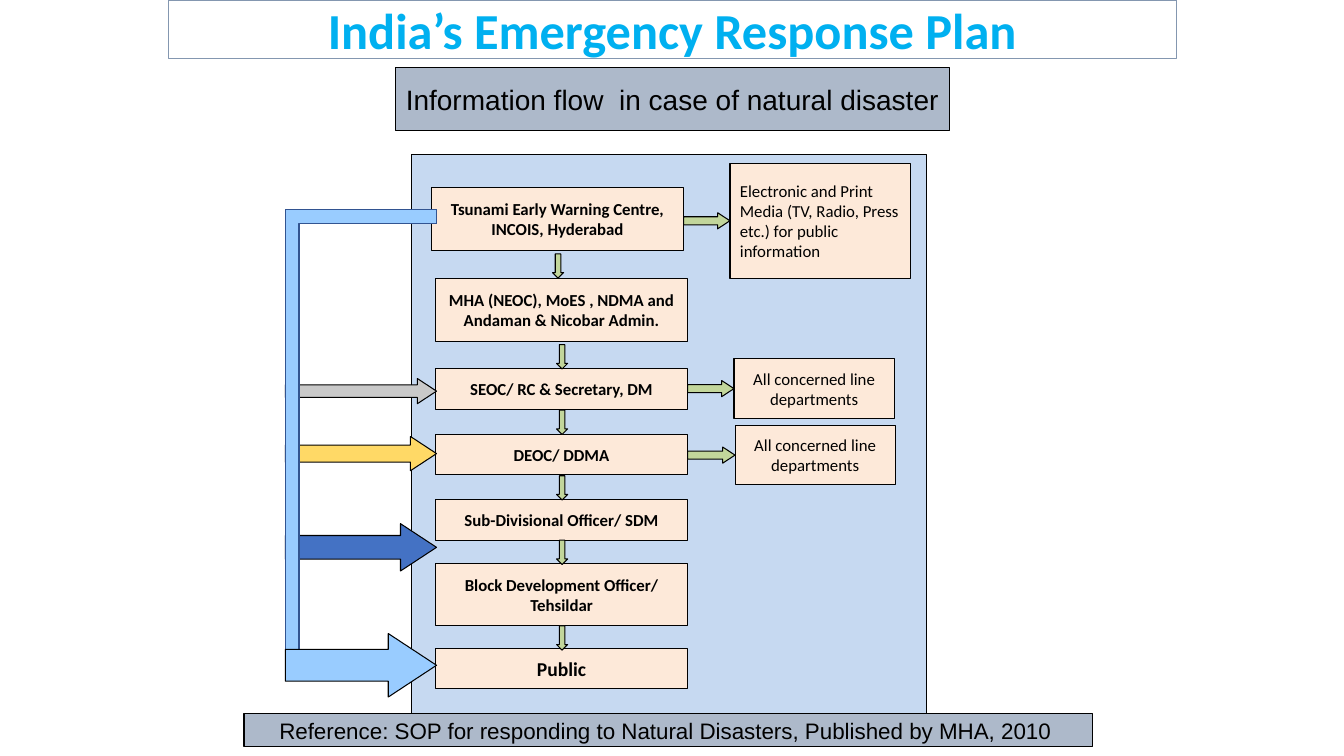
"""Build the slide on India's emergency response plan."""
from pptx import Presentation
from pptx.dml.color import RGBColor
from pptx.enum.shapes import MSO_SHAPE
from pptx.enum.text import MSO_ANCHOR, PP_ALIGN
from pptx.util import Pt

PX = 9144

BLACK = RGBColor(0x00, 0x00, 0x00)
WHITE = RGBColor(0xFF, 0xFF, 0xFF)
SKY = RGBColor(0x00, 0xB0, 0xF0)
TITLE_LINE = RGBColor(0x84, 0x97, 0xB0)
BANNER = RGBColor(0xAD, 0xB9, 0xCA)
PANEL = RGBColor(0xC6, 0xD9, 0xF1)
PEACH = RGBColor(0xFD, 0xE9, 0xD9)
GREEN = RGBColor(0xC2, 0xD6, 0x9B)
GREY = RGBColor(0xC9, 0xC9, 0xC9)
YELLOW = RGBColor(0xFF, 0xD9, 0x66)
BLUE = RGBColor(0x44, 0x72, 0xC4)
PALE_BLUE = RGBColor(0x99, 0xCC, 0xFF)
BRACKET_LINE = RGBColor(0x32, 0x54, 0x91)

TITLE = "India’s Emergency Response Plan"
SUBTITLE = "Information flow  in case of natural disaster "
REFERENCE = "Reference: SOP for responding to Natural Disasters, Published by MHA, 2010 "

STEP_WIDTH = 250
STEPS = [
    ("Tsunami Early Warning Centre, INCOIS, Hyderabad", 428, 186, 63, 12),
    ("MHA (NEOC), MoES , NDMA and Andaman & Nicobar Admin.", 432, 276, 63, 12),
    ("SEOC/ RC & Secretary, DM", 432, 366, 40, 12),
    ("DEOC/ DDMA", 432, 431, 40, 12),
    ("Sub-Divisional Officer/ SDM", 432, 496, 40, 12),
    ("Block Development Officer/ Tehsildar", 432, 559, 62, 12),
    ("Public", 432, 643, 40, 14),
]
SIDE_BOXES = [
    (0, "Electronic and Print Media (TV, Radio, Press etc.) for public information",
     (724, 162, 179, 114), PP_ALIGN.LEFT),
    (2, "All concerned line departments", (728, 356, 159, 59), PP_ALIGN.CENTER),
    (3, "All concerned line departments", (729, 422, 159, 59), PP_ALIGN.CENTER),
]

BYPASS_LEFT, BYPASS_TOP, BYPASS_WIDTH = 283, 208, 150
BYPASSES = [
    (GREY, 183, 388, 25),
    (YELLOW, 247, 450, 34),
    (BLUE, 343, 543, 47),
    (PALE_BLUE, 462, 660, 63),
]


def add_figure(slide, kind, box, fill, line=BLACK, weight=0.75, rotation=0, adjustments=()):
    """Draw a preset shape that covers box once it has been rotated."""
    left, top, width, height = box
    if rotation in (90, 270):
        left, top = left + (width - height) / 2, top + (height - width) / 2
        width, height = height, width
    shape = slide.shapes.add_shape(kind, *(round(n * PX) for n in (left, top, width, height)))
    shape.rotation = rotation
    for index, value in enumerate(adjustments):
        shape.adjustments[index] = value
    shape.shadow.inherit = False
    shape.fill.solid()
    shape.fill.fore_color.rgb = fill
    shape.line.color.rgb = line
    shape.line.width = Pt(weight)
    return shape


def add_text_box(slide, text, box, fill=PEACH, line=BLACK, size=12, font="Calibri",
                 color=BLACK, bold=False, align=PP_ALIGN.CENTER, space_after=10):
    """Draw a rectangle holding one paragraph."""
    shape = add_figure(slide, MSO_SHAPE.RECTANGLE, box, fill, line)
    frame = shape.text_frame
    frame.word_wrap = True
    frame.vertical_anchor = MSO_ANCHOR.MIDDLE
    paragraph = frame.paragraphs[0]
    paragraph.alignment = align
    paragraph.space_after = Pt(space_after)
    run = paragraph.add_run()
    run.text = text
    run.font.size = Pt(size)
    run.font.name = font
    run.font.bold = bold
    run.font.color.rgb = color


def add_right_arrow(slide, box, fill):
    """Draw a block arrow pointing right."""
    add_figure(slide, MSO_SHAPE.DOWN_ARROW, box, fill, rotation=270, adjustments=(0.5, 0.76))


def add_steps(slide):
    """Draw the chain of offices and the arrows between them."""
    for text, left, top, height, size in STEPS:
        add_text_box(slide, text, (left, top, STEP_WIDTH, height), size=size, bold=True)
    for (_, left, top, height, _), following in zip(STEPS, STEPS[1:]):
        arrow_top = max(top + height, following[2] - 24)
        box = (left + STEP_WIDTH / 2 - 5, arrow_top, 11, 24)
        add_figure(slide, MSO_SHAPE.DOWN_ARROW, box, GREEN, adjustments=(0.5, 0.5))


def add_side_boxes(slide):
    """Draw the boxes on the right, each fed by its step."""
    for step, text, box, align in SIDE_BOXES:
        add_text_box(slide, text, box, align=align)
        left, top, _, height = box
        start = STEPS[step][1] + STEP_WIDTH
        add_right_arrow(slide, (start, top + height / 2 - 8, left - start, 16), GREEN)


def add_bypasses(slide):
    """Draw the direct routes from the warning centre on the left."""
    for color, height, middle, arrow_height in BYPASSES:
        add_figure(slide, MSO_SHAPE.CORNER, (BYPASS_LEFT, BYPASS_TOP, BYPASS_WIDTH, height),
                   color, BRACKET_LINE, weight=1, rotation=90, adjustments=(0.09, 0.09))
        add_right_arrow(slide, (BYPASS_LEFT, middle - arrow_height / 2, BYPASS_WIDTH,
                                arrow_height), color)


def main():
    """Assemble and save the slide."""
    presentation = Presentation()
    presentation.slide_width = 1333 * PX
    presentation.slide_height = 750 * PX
    slide = presentation.slides.add_slide(presentation.slide_layouts[6])
    add_figure(slide, MSO_SHAPE.RECTANGLE, (408, 153, 511, 556), PANEL)
    add_steps(slide)
    add_side_boxes(slide)
    add_bypasses(slide)
    add_text_box(slide, SUBTITLE, (392, 67, 550, 63), fill=BANNER, size=20, font="Arial")
    add_text_box(slide, REFERENCE, (242, 708, 842, 33), fill=BANNER, size=16, font="Arial")
    add_text_box(slide, TITLE, (167, 0, 1000, 58), fill=WHITE, line=TITLE_LINE, size=36,
                 color=SKY, bold=True, space_after=0)
    presentation.save("out.pptx")


if __name__ == "__main__":
    main()
